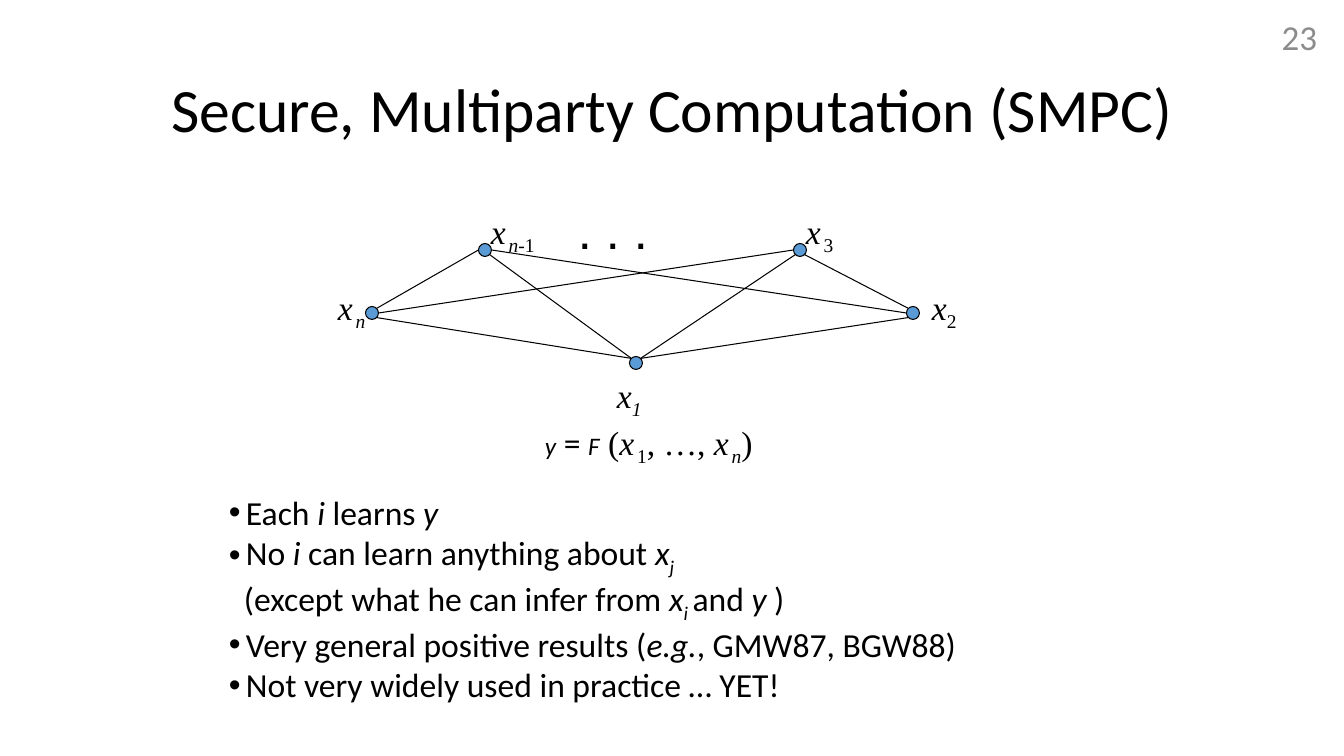
from dataclasses import dataclass
from lxml import etree
from pptx import Presentation
from pptx.dml.color import RGBColor
from pptx.enum.shapes import MSO_CONNECTOR, MSO_SHAPE
from pptx.enum.text import MSO_ANCHOR, PP_ALIGN
from pptx.oxml.ns import qn
from pptx.util import Pt

LEFT, CENTER, RIGHT = PP_ALIGN.LEFT, PP_ALIGN.CENTER, PP_ALIGN.RIGHT
TOP, MIDDLE = MSO_ANCHOR.TOP, MSO_ANCHOR.MIDDLE
OVAL, STRAIGHT = MSO_SHAPE.OVAL, MSO_CONNECTOR.STRAIGHT


@dataclass(frozen=True)
class Theme:
    ink: str = "000000"
    node: str = "5B9BD5"
    muted: str = "8C8C8C"
    sans: str = "Calibri"
    serif: str = "Times New Roman"
    dots: str = "Arial"
    title: int = 44
    ellipsis: int = 36
    number: int = 25
    body: int = 24
    small: int = 18
    thin: int = 8
    line: float = 0.75


T = Theme()

# Run flags: i italic, s subscript, m small, t thin, c Calibri
TITLE = "Secure, Multiparty Computation (SMPC)"
NUMBER = "23"
ELLIPSIS = ". . ."
NODES = {"x1": (636, 363), "x2": (913, 313), "x3": (800, 250),
         "xn-1": (485, 250), "xn": (372, 313)}
# Each edge joins two nodes, each at a compass point of its circle
EDGES = [("x2", "NW", "x3", "SE"), ("x1", "NE", "x2", "SW"),
         ("xn", "NE", "xn-1", "W"), ("xn", "SE", "x1", "NW"),
         ("x1", "NE", "x3", "SW"), ("xn-1", "SE", "x1", "NW"),
         ("xn", "E", "x3", "W"), ("xn-1", "E", "x2", "W")]
FORMULAS = [
    ((607, 370, 46, 50), [("x", "i"), ("1", "is")]),
    ((922, 282, 46, 50), [("x", "i"), ("2", "s")]),
    ((796, 206, 49, 50), [("x", "i"), (" ", "it"), ("3", "s")]),
    ((481, 206, 67, 50), [("x", "i"), (" ", "it"), ("n-", "is"), ("1", "s")]),
    ((328, 282, 49, 50), [("x", "i"), (" ", "it"), ("n", "is")]),
    ((535, 417, 233, 50), [("y", "icm"), (" = ", "c"), ("F", "icm"), (" (", ""),
                           ("x", "i"), (" ", "it"), ("1", "s"), (", …, ", ""),
                           ("x", "i"), (" ", "it"), ("n", "is"), (")", "")]),
]
POINTS = [
    (True, [("Each ", "c"), ("i", "ic"), (" learns ", "c"), ("y", "ic")]),
    (True, [("No ", "c"), ("i", "ic"), (" can learn anything about ", "c"),
            ("x", "ic"), ("j", "ics")]),
    (False, [("(except what he can infer from ", "c"), ("x", "ic"),
             ("i ", "ics"), ("and ", "c"), ("y ", "ic"), (")", "c")]),
    (True, [("Very general positive results (", "c"), ("e.g.", "ic"),
            (", GMW87, BGW88)", "c")]),
    (True, [("Not very widely used in practice … YET!", "c")]),
]
NODE_SIZE = 13
BULLET_INDENT, PLAIN_INDENT = 17, 15


def px(n):
    return round(n * 914400 / 100.8)


def style(font, face, size, color=T.ink):
    font.name, font.size = face, Pt(size)
    font.color.rgb = RGBColor.from_string(color)


def add_box(s, box, wrap=True, anchor=TOP):
    tf = s.shapes.add_textbox(*map(px, box)).text_frame
    tf.word_wrap, tf.vertical_anchor = wrap, anchor
    return tf


def add_label(s, box, text, face, size, color=T.ink, align=LEFT, anchor=TOP):
    tf = add_box(s, box, align != LEFT, anchor)
    tf.text = text
    p = tf.paragraphs[0]
    p.alignment = align
    style(p.runs[0].font, face, size, color)
    return p


def add_runs(p, runs):
    for text, flags in runs:
        r = p.add_run()
        r.text = text
        size = T.small if "m" in flags else T.thin if "t" in flags else T.body
        style(r.font, T.sans if "c" in flags else T.serif, size)
        r.font.italic = "i" in flags
        if "s" in flags:
            r._r.get_or_add_rPr().set("baseline", "-25000")


def set_indent(p, bulleted):
    indent = px(BULLET_INDENT if bulleted else PLAIN_INDENT)
    pPr = p._p.get_or_add_pPr()
    pPr.set("marL", str(indent))
    pPr.set("indent", str(-indent if bulleted else 0))
    if bulleted:
        etree.SubElement(pPr, qn("a:buFont")).set("typeface", "Arial")
        etree.SubElement(pPr, qn("a:buChar")).set("char", "•")


def add_node(s, center):
    x, y = (c - NODE_SIZE / 2 for c in center)
    node = s.shapes.add_shape(OVAL, px(x), px(y), px(NODE_SIZE), px(NODE_SIZE))
    node.shadow.inherit = False
    node.fill.solid()
    node.fill.fore_color.rgb = RGBColor.from_string(T.node)
    node.line.color.rgb = RGBColor.from_string(T.ink)
    node.line.width = Pt(T.line)


def rim_point(name, compass):
    """Point on a node's circle in the given compass direction."""
    dx = ("E" in compass) - ("W" in compass)
    dy = ("S" in compass) - ("N" in compass)
    reach = NODE_SIZE / 2 / (dx * dx + dy * dy) ** 0.5
    x, y = NODES[name]
    return px(x + dx * reach), px(y + dy * reach)


def add_edge(s, a, a_side, b, b_side):
    edge = s.shapes.add_connector(STRAIGHT, *rim_point(a, a_side), *rim_point(b, b_side))
    edge.line.color.rgb = RGBColor.from_string(T.ink)
    edge.line.width = Pt(T.line)
    etree.SubElement(edge._element.spPr, qn("a:effectLst"))


def main():
    prs = Presentation()
    prs.slide_width, prs.slide_height = px(1344), px(756)
    s = prs.slides.add_slide(prs.slide_layouts[6])

    add_label(s, (1025, 17, 302, 40), NUMBER, T.sans, T.number, T.muted, RIGHT, MIDDLE)
    title = add_label(s, (93, 40, 1159, 146), TITLE, T.sans, T.title,
                      align=CENTER, anchor=MIDDLE)
    title.line_spacing = 0.9

    for center in NODES.values():
        add_node(s, center)
    for edge in EDGES:
        add_edge(s, *edge)
    add_label(s, (568, 194, 91, 71), ELLIPSIS, T.dots, T.ellipsis)
    for box, runs in FORMULAS:
        add_runs(add_box(s, box, wrap=False).paragraphs[0], runs)

    tf = add_box(s, (219, 487, 882, 214))
    for i, (bulleted, runs) in enumerate(POINTS):
        p = tf.add_paragraph() if i else tf.paragraphs[0]
        set_indent(p, bulleted)
        add_runs(p, runs)

    prs.save("out.pptx")


if __name__ == "__main__":
    main()
